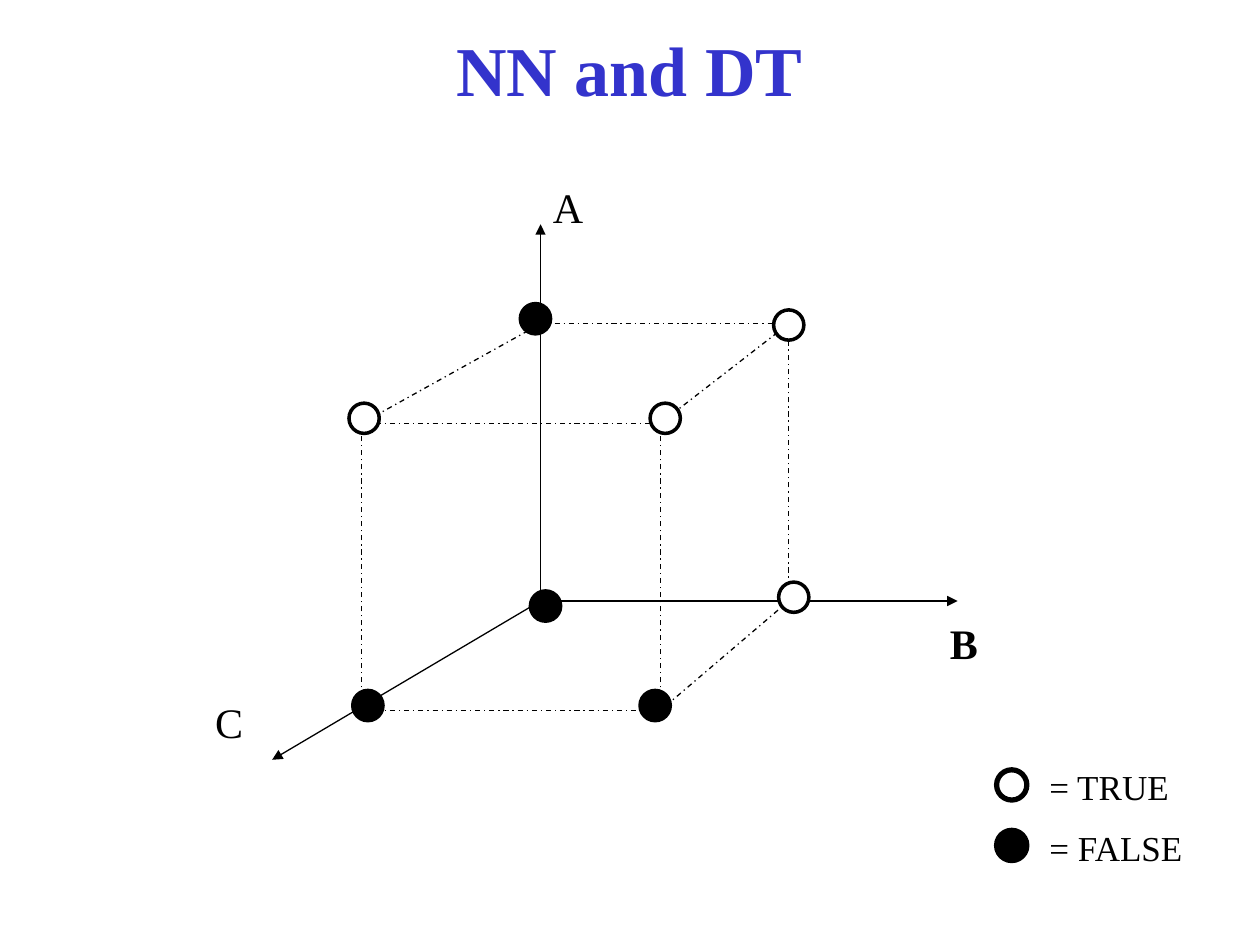
import itertools
import pptx
import pptx.dml.color
import pptx.enum.dml
import pptx.enum.shapes
import pptx.enum.text
import pptx.oxml.ns
import pptx.util
from lxml import etree

Inches = pptx.util.Inches
FONT = "Times New Roman"
BLACK, WHITE, BLUE = "000000", "FFFFFF", "3333CC"
DOT = 0.24


def color(code):
    return pptx.dml.color.RGBColor.from_string(code)


def write(shape, text, size=24, bold=False, ink=BLACK, align="LEFT",
          anchor="TOP", wrap=False):
    frame = shape.text_frame
    frame.word_wrap = wrap
    frame.vertical_anchor = getattr(pptx.enum.text.MSO_ANCHOR, anchor)
    par = frame.paragraphs[0]
    par.alignment = getattr(pptx.enum.text.PP_ALIGN, align)
    run = par.add_run()
    run.text = text
    run.font.name = FONT
    run.font.size = pptx.util.Pt(size)
    run.font.bold = bold
    run.font.color.rgb = color(ink)


def label(slide, text, left, top, width, height, **style):
    box = slide.shapes.add_textbox(
        Inches(left), Inches(top), Inches(width), Inches(height))
    write(box, text, **style)


def line(slide, start, end, arrow=False):
    link = slide.shapes.add_connector(
        pptx.enum.shapes.MSO_CONNECTOR.STRAIGHT,
        *(Inches(n) for n in (*start, *end)))
    link.line.color.rgb = color(BLACK)
    link.line.width = pptx.util.Pt(0.75)
    if arrow:
        tip = etree.SubElement(link.line._get_or_add_ln(),
                               pptx.oxml.ns.qn("a:tailEnd"))
        tip.set("type", "triangle")
    else:
        link.line.dash_style = pptx.enum.dml.MSO_LINE.DASH_DOT
    etree.SubElement(link._element.spPr, pptx.oxml.ns.qn("a:effectLst"))


def dot(slide, x, y, true, weight=2):
    disc = slide.shapes.add_shape(
        pptx.enum.shapes.MSO_SHAPE.OVAL, Inches(x - DOT / 2),
        Inches(y - DOT / 2), Inches(DOT), Inches(DOT))
    disc.shadow.inherit = False
    disc.fill.solid()
    disc.fill.fore_color.rgb = color(WHITE if true else BLACK)
    disc.line.color.rgb = color(BLACK)
    disc.line.width = pptx.util.Pt(weight)


def title(slide, left, top, width, height):
    head = slide.shapes.title
    head.left, head.top = Inches(left), Inches(top)
    head.width, head.height = Inches(width), Inches(height)
    write(head, "NN and DT", size=40, bold=True, ink=BLUE,
          align="CENTER", anchor="MIDDLE", wrap=True)


def cube(slide, left, top, width, height):
    def at(x, y):
        return left + x, top + y

    nodes = {
        (0, 0, 0): (2.13, 2.99),
        (1, 0, 0): (2.13, 0.79),
        (0, 1, 0): (4.1, 2.99),
        (1, 1, 0): (4.1, 0.79),
        (0, 0, 1): (0.71, 3.86),
        (1, 0, 1): (0.71, 1.58),
        (0, 1, 1): (3.08, 3.86),
        (1, 1, 1): (3.08, 1.58),
    }
    root = nodes[0, 0, 0]
    for tip in ((root[0], 0), (0, height), (width, root[1])):
        line(slide, at(*root), at(*tip), arrow=True)

    for one, two in itertools.combinations(nodes, 2):
        steps = sum(a != b for a, b in zip(one, two))
        if steps == 1 and any(one):
            line(slide, at(*nodes[one]), at(*nodes[two]))

    for text, x, y, wide, bold in (("A", 2.13, -0.39, 0.44, False),
                                   ("B", 5.28, 3.07, 0.42, True),
                                   ("C", -0.55, 3.7, 0.42, False)):
        label(slide, text, *at(x, y), wide, 0.5, bold=bold)

    for x, y, true in ((3.12, 1.54, True), (0.73, 1.54, True),
                       (4.14, 2.96, True), (4.1, 0.8, True),
                       (2.09, 0.75, False), (0.76, 3.82, False),
                       (3.04, 3.82, False), (2.17, 3.03, False)):
        dot(slide, *at(x, y), true)


def legend(slide, left, top, width, height):
    step = height / 2
    for row, (text, true) in enumerate((("= TRUE", True),
                                        ("= FALSE", False))):
        y = top + row * step
        dot(slide, left + DOT / 2, y + 0.2, true, weight=3)
        label(slide, text, left + 0.32, y, width - 0.32, 0.43, size=20)


def main():
    deck = pptx.Presentation()
    deck.slide_width, deck.slide_height = Inches(10), Inches(7.5)
    slide = deck.slides.add_slide(deck.slide_layouts[5])
    slide.background.fill.solid()
    slide.background.fill.fore_color.rgb = color(WHITE)
    title(slide, 0.33, 0.17, 9.33, 0.75)
    cube(slide, 2.16, 1.78, 5.44, 4.25)
    legend(slide, 7.91, 6.03, 1.6, 0.96)
    deck.save("out.pptx")


if __name__ == "__main__":
    main()
